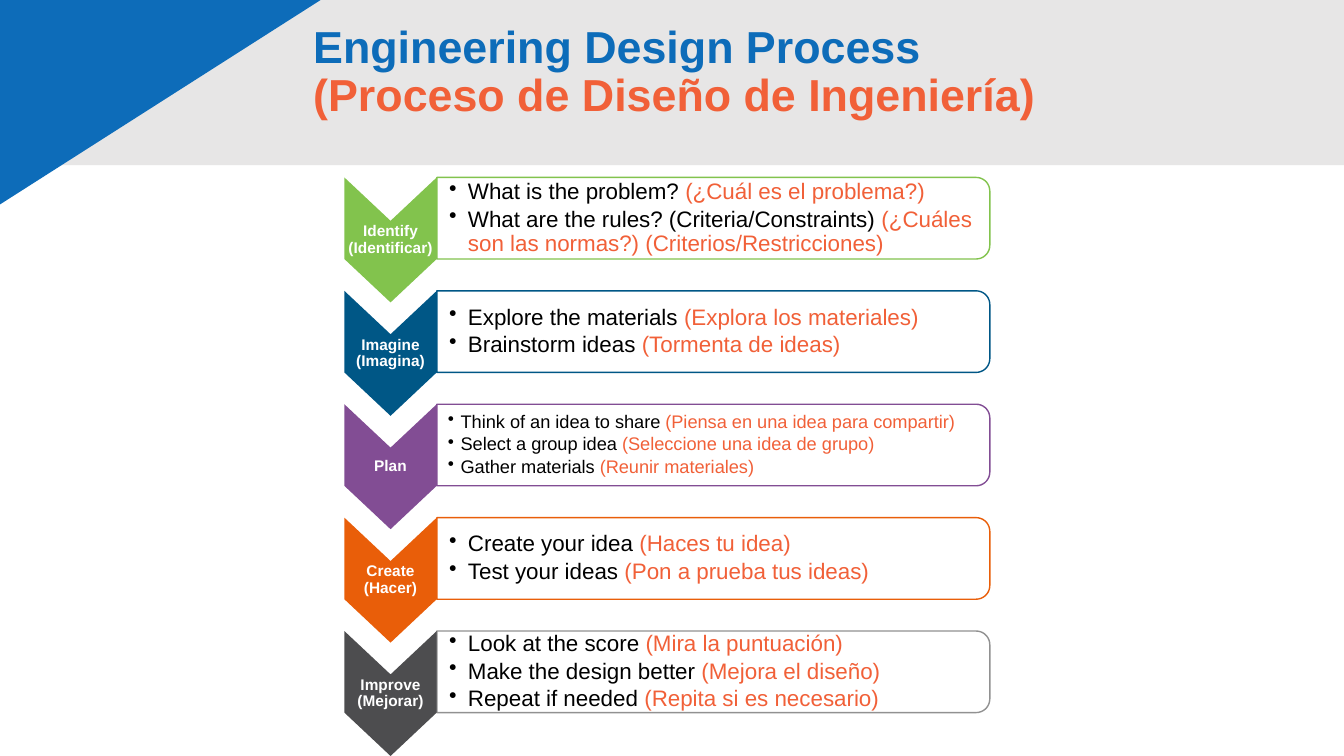
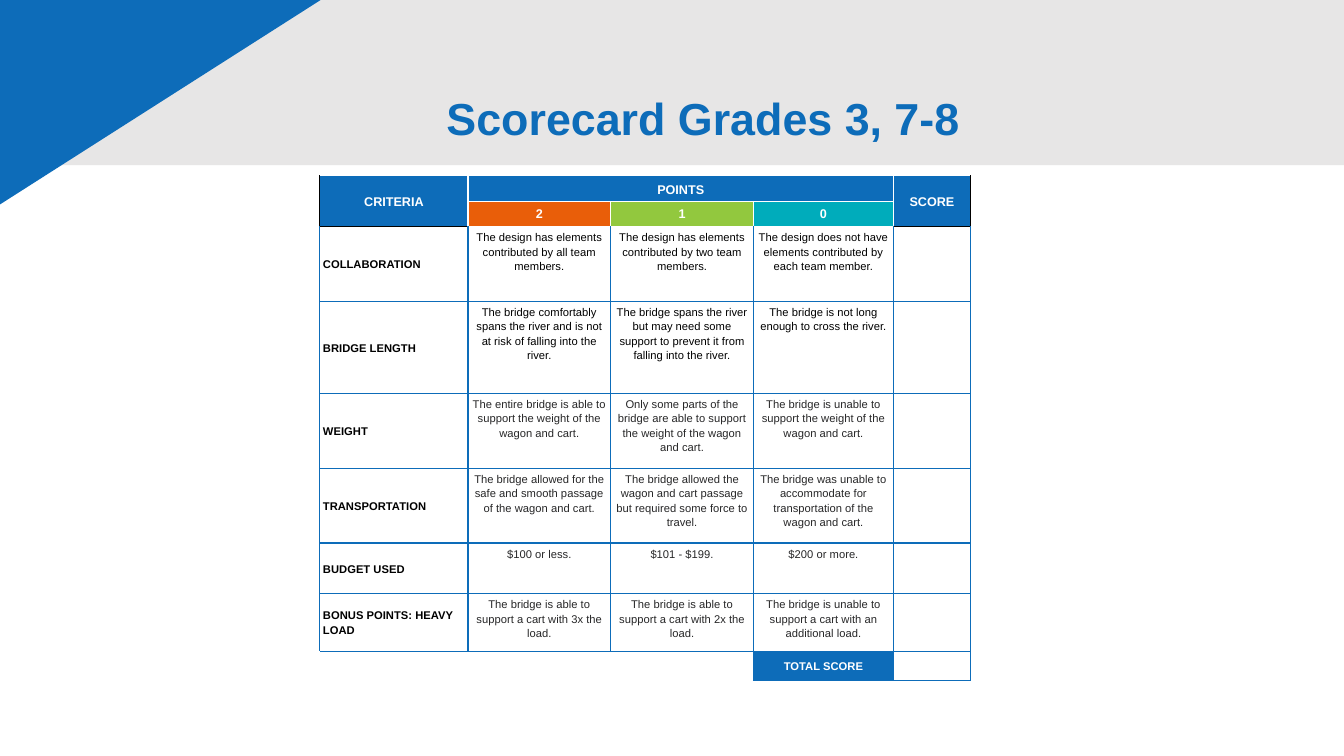
"""Build two slides on a design process and its scorecard."""
from math import cos, radians, sin

from lxml import etree
from pptx import Presentation
from pptx import util as u
from pptx.dml.color import RGBColor
from pptx.enum import shapes, text
from pptx.oxml import ns

HUES = {
    "blue": "0D6CB9", "coral": "F16038", "gray": "E7E6E6", "white": "FFFFFF",
    "black": "000000", "ink": "272728", "lime": "82C34D", "navy": "005786",
    "plum": "824D94", "orange": "E95E09", "slate": "4D4D4F", "ash": "919191",
    "green": "92C83E", "teal": "00ACBB",
}
LEFT, MID, RIGHT = (text.PP_ALIGN.LEFT, text.PP_ALIGN.CENTER,
                    text.PP_ALIGN.RIGHT)
CENTER, TOP = text.MSO_ANCHOR.MIDDLE, text.MSO_ANCHOR.TOP

STEPS = [
    ("Identify (Identificar)", "lime", "lime", 16, [
        ("What is the problem? ", "(¿Cuál es el problema?)"),
        ("What are the rules? (Criteria/Constraints) ",
         "(¿Cuáles son las normas?) (Criterios/Restricciones)")]),
    ("Imagine (Imagina)", "navy", "navy", 16, [
        ("Explore the materials ", "(Explora los materiales)"),
        ("Brainstorm ideas ", "(Tormenta de ideas)")]),
    ("Plan", "plum", "plum", 13, [
        ("Think of an idea to share ", "(Piensa en una idea para compartir)"),
        ("Select a group idea ", "(Seleccione una idea de grupo)"),
        ("Gather materials ", "(Reunir materiales)")]),
    ("Create (Hacer)", "orange", "orange", 16, [
        ("Create your idea ", "(Haces tu idea)"),
        ("Test your ideas ", "(Pon a prueba tus ideas)")]),
    ("Improve (Mejorar)", "slate", "ash", 16, [
        ("Look at the score ", "(Mira la puntuación)"),
        ("Make the design better ", "(Mejora el diseño)"),
        ("Repeat if needed ", "(Repita si es necesario)")]),
]

COLS = [105.75, 102, 102, 100, 55]
ROWS = [18.5, 17.75, 53.5, 65.75, 53.5, 53.5, 36, 41.25, 20.75]
SCORES = [
    ["CRITERIA", "POINTS", "", "", "SCORE"],
    ["", "2", "1", "0", ""],
    ["COLLABORATION",
     "The design has elements contributed by all team members.",
     "The design has elements contributed by two team members.",
     "The design does not have elements contributed by each team member.", ""],
    ["BRIDGE LENGTH",
     "The bridge comfortably spans the river and is not at risk of falling "
     "into the river.",
     "The bridge spans the river but may need some support to prevent it from "
     "falling into the river.",
     "The bridge is not long enough to cross the river.", ""],
    ["WEIGHT",
     "The entire bridge is able to support the weight of the wagon and cart.",
     "Only some parts of the bridge are able to support the weight of the "
     "wagon and cart.",
     "The bridge is unable to support the weight of the wagon and cart.", ""],
    ["TRANSPORTATION",
     "The bridge allowed for the safe and smooth passage of the wagon and "
     "cart.",
     "The bridge allowed the wagon and cart passage but required some force "
     "to travel.",
     "The bridge was unable to accommodate for transportation of the wagon "
     "and cart.", ""],
    ["BUDGET USED", "$100 or less.", "$101 - $199.", "$200 or more.", ""],
    ["BONUS POINTS: HEAVY LOAD",
     "The bridge is able to support a cart with 3x the load.",
     "The bridge is able to support a cart with 2x the load.",
     "The bridge is unable to support a cart with an additional load.", ""],
    ["", "", "", "TOTAL SCORE", ""],
]
SPANS = [(0, 0, 1, 0), (0, 1, 0, 3), (0, 4, 1, 4), (8, 0, 8, 2)]
TINTS = {(1, 1): "orange", (1, 2): "green", (1, 3): "teal", (8, 3): "blue"}


def hue(name):
    return RGBColor.from_string(HUES[name])


def edges(row, col):
    inner = 0 < col < 4
    if row < 2:
        return ("white" if col else "black", "black" if col == 4 else "white",
                "white", "white" if inner else "black")
    if row == 8 and col < 3:
        return "white", "blue", "blue", "white"
    top = "blue" if row > 2 else "white" if inner else "black"
    return "blue", "blue", top, "blue"


class Deck:
    def __init__(self):
        self.file = Presentation()
        self.file.slide_width, self.file.slide_height = u.Pt(960), u.Pt(540)
        self.plan = self.file.slide_layouts[5]
        self.slide = None

    def page(self, parts, box, align):
        self.slide = self.file.slides.add_slide(self.plan)
        if len(self.file.slides) == 1:
            self.frame()
        title = self.slide.shapes.title
        title.left, title.top, title.width, title.height = map(u.Pt, box)
        frame = title.text_frame
        frame.auto_size = text.MSO_AUTO_SIZE.NONE
        frame.vertical_anchor = CENTER
        para = frame.paragraphs[0]
        self.style(para, 32, align, 0.9, bold=True)
        for i, part in enumerate(parts):
            if i:
                para.add_line_break()
            self.run(para, *part)

    def frame(self):
        kind = shapes.MSO_SHAPE
        band = self.slide.shapes.add_shape(
            kind.RECTANGLE, 0, 0, u.Pt(960), u.Pt(118))
        wedge = self.slide.shapes.add_shape(
            kind.RIGHT_TRIANGLE, u.Pt(41.5), u.Pt(-41.5), u.Pt(146), u.Pt(229))
        wedge.rotation = 90
        for i, (shape, fill) in enumerate([(band, "gray"), (wedge, "blue")]):
            self.paint(shape, fill)
            self.plan.shapes.element.insert(2 + i, shape.element)

    def paint(self, shape, fill, line=None):
        shape.shadow.inherit = False
        shape.fill.solid()
        shape.fill.fore_color.rgb = hue(fill)
        if line:
            shape.line.color.rgb = hue(line)
            shape.line.width = u.Pt(1)
        else:
            shape.line.fill.background()

    def style(self, para, size, align, space, bold=False, color=None):
        para.alignment = align
        para.line_spacing = space
        font = para.font
        font.name, font.size, font.bold = "Arial", u.Pt(size), bold
        if color:
            font.color.rgb = hue(color)

    def run(self, para, words, color):
        run = para.add_run()
        run.text = words
        run.font.color.rgb = hue(color)

    def shape(self, spots, fill, line, pads):
        first, *rest = [(u.Pt(x), u.Pt(y)) for x, y in spots]
        draft = self.slide.shapes.build_freeform(*first)
        draft.add_line_segments(rest, close=True)
        shape = draft.convert_to_shape()
        self.paint(shape, fill, line)
        frame = shape.text_frame
        frame.word_wrap = True
        frame.vertical_anchor = CENTER
        (frame.margin_left, frame.margin_top,
         frame.margin_right, frame.margin_bottom) = map(u.Pt, pads)
        return frame

    def arrow(self, x, y, wide, high, notch, words, fill):
        mid, right, low = x + wide / 2, x + wide, y + high
        spots = [(right, y), (right, low), (mid, low + notch), (x, low),
                 (x, y), (mid, y + notch)]
        para = self.shape(spots, fill, None, (1, 34, 1, 34)).paragraphs[0]
        self.style(para, 11, MID, 0.9, bold=True)
        self.run(para, words, "white")

    def panel(self, x, y, wide, high, items, line, size):
        bend = 9.75
        right, low = x + wide - bend, y + high - bend
        spots = [(x, y)]
        for base, start in ((y + bend, -90), (low, 0)):
            spots += [(right + bend * cos(radians(a)),
                       base + bend * sin(radians(a)))
                      for a in range(start, start + 91, 10)]
        spots.append((x, y + high))
        large = size > 14
        frame = self.shape(spots, "white", line,
                           (8.75 if large else 8, 3.6, 3.6, 3.6))
        dent = u.Pt(13.5 if large else 9)
        for i, (main, gloss) in enumerate(items):
            para = frame.add_paragraph() if i else frame.paragraphs[0]
            prop = para._p.get_or_add_pPr()
            prop.set("marL", str(dent))
            prop.set("indent", str(-dent))
            etree.SubElement(prop, ns.qn("a:buChar"), char="•")
            para.space_after = u.Pt(size * 0.15)
            self.style(para, size, LEFT, 0.9)
            self.run(para, main, "black")
            self.run(para, gloss, "coral")

    def table(self, x, y):
        grid = self.slide.shapes.add_table(
            len(ROWS), len(COLS), u.Pt(x), u.Pt(y),
            u.Pt(sum(COLS)), u.Pt(sum(ROWS))).table
        grid.first_row = grid.horz_banding = False
        for col, wide in zip(grid.columns, COLS):
            col.width = u.Pt(wide)
        for row, high in zip(grid.rows, ROWS):
            row.height = u.Pt(high)
        for r, line in enumerate(SCORES):
            for c, words in enumerate(line):
                self.cell(grid.cell(r, c), r, c, words)
        for top, left, low, right in SPANS:
            grid.cell(top, left).merge(grid.cell(low, right))

    def cell(self, cell, r, c, words):
        head, total = r < 2, r == 8
        for side, color in zip("LRTB", edges(r, c)):
            self.edge(cell, side, color)
        cell.fill.solid()
        cell.fill.fore_color.rgb = hue(
            TINTS.get((r, c), "blue" if head else "white"))
        cell.margin_left = cell.margin_right = u.Pt(2.2)
        cell.margin_top = cell.margin_bottom = u.Pt(2.2)
        cell.vertical_anchor = CENTER if r == 0 or c == 0 or total else TOP
        label = c == 0 and not head
        color = ("white" if head or total
                 else "black" if label or r < 4 else "ink")
        size = 9 if head else 8
        para = cell.text_frame.paragraphs[0]
        self.style(para, size, LEFT if label else MID, 1.15,
                   head or label or total, color)
        if words:
            self.run(para, words, color)
        else:
            etree.SubElement(para._p, ns.qn("a:endParaRPr"),
                             sz=str(size * 100))

    def edge(self, cell, side, color):
        prop = cell._tc.get_or_add_tcPr()
        line = etree.SubElement(prop, ns.qn("a:ln" + side), w=str(u.Pt(1)))
        fill = etree.SubElement(line, ns.qn("a:solidFill"))
        etree.SubElement(fill, ns.qn("a:srgbClr"), val=HUES[color])


def main():
    deck = Deck()
    deck.page([("Engineering Design Process", "blue"),
               ("(Proceso de Diseño de Ingeniería)", "coral")],
              (216.5, 0, 698, 104.5), LEFT)
    for i, (name, fill, line, size, items) in enumerate(STEPS):
        y = 126.75 + 81 * i
        deck.panel(312, y, 395, 58.25, items, line, size)
        deck.arrow(246, y, 66, 58.25, 31, name, fill)

    deck.page([("Scorecard Grades 3, 7-8", "blue")],
              (0, 34.5, 693, 104.5), RIGHT)
    deck.table(228.5, 125.5)
    deck.file.save("out.pptx")


if __name__ == "__main__":
    main()
